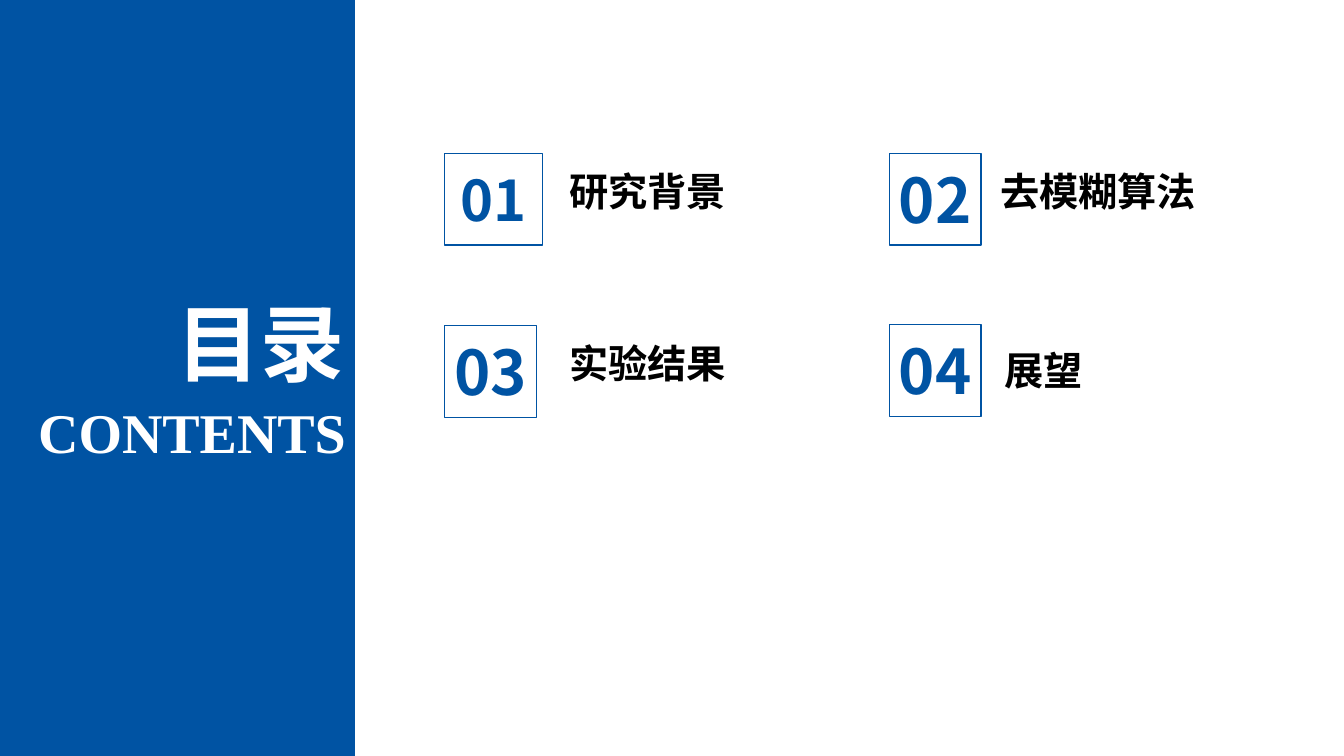
"""Build the contents slide with a blue side panel and four numbered topics."""
from lxml import etree
from pptx import Presentation
from pptx.dml.color import RGBColor
from pptx.enum.shapes import MSO_SHAPE as Shape
from pptx.enum.text import MSO_AUTO_SIZE as AutoSize, PP_ALIGN as Align
from pptx.oxml.ns import qn
from pptx.util import Inches, Pt

COLORS = {"blue": "0053A3", "white": "FFFFFF", "black": "000000"}
SANS, SERIF = "Noto Sans CJK SC", "Times New Roman"
PANEL = (0, 0, 3.52, 7.5)
HEADINGS = [
    ("目录", (0.98, 2.84, 2.54, 1.11), 60, SANS),
    ("CONTENTS", (0, 3.89, 3.53, 0.77), 40, SERIF),
]
TOPICS = [
    {"number": "01", "size": 40, "frame": (4.41, 1.52, 0.97, 0.91),
     "title": "研究背景", "title_box": (5.55, 1.61, 2.79, 0.57)},
    {"number": "03", "size": 44, "frame": (4.41, 3.23, 0.91, 0.91),
     "title": "实验结果", "title_box": (5.55, 3.32, 2.62, 0.57)},
    {"number": "04", "size": 44, "frame": (8.82, 3.22, 0.91, 0.91),
     "title": "展望", "title_box": (9.86, 3.39, 2.62, 0.57)},
    {"number": "02", "size": 44, "frame": (8.82, 1.52, 0.91, 0.91),
     "title": "去模糊算法", "title_box": (9.82, 1.61, 3.05, 0.57)},
]
NUMBER_BOXES = {40: (0.97, 0.77), 44: (0.98, 0.84)}


def color(name):
    return RGBColor.from_string(COLORS[name])


def add_text(slide, text, box, size, color_name, align=Align.LEFT, font_name=SANS):
    shape = slide.shapes.add_textbox(*map(Inches, box))
    frame = shape.text_frame
    frame.word_wrap = True
    frame.auto_size = AutoSize.SHAPE_TO_FIT_TEXT
    paragraph = frame.paragraphs[0]
    paragraph.alignment = align
    run = paragraph.add_run()
    run.text = text
    font = run.font
    font.size, font.bold, font.name = Pt(size), True, font_name
    font.color.rgb = color(color_name)
    east_asian = etree.SubElement(run._r.get_or_add_rPr(), qn("a:ea"))
    east_asian.set("typeface", font_name)


def add_rectangle(slide, box, fill=None, line=None):
    shape = slide.shapes.add_shape(Shape.RECTANGLE, *map(Inches, box))
    shape.shadow.inherit = False
    if fill:
        shape.fill.solid()
        shape.fill.fore_color.rgb = color(fill)
    else:
        shape.fill.background()
    if line:
        shape.line.color.rgb = color(line)
        shape.line.width = Pt(1)
    else:
        shape.line.fill.background()


def add_topic(slide, topic):
    left, top, width, height = topic["frame"]
    box_width, box_height = NUMBER_BOXES[topic["size"]]
    number_box = (left + (width - box_width) / 2, top + (height - box_height) / 2,
                  box_width, box_height)
    add_text(slide, topic["title"], topic["title_box"], 28, "black")
    add_text(slide, topic["number"], number_box, topic["size"], "blue", Align.CENTER)
    add_rectangle(slide, topic["frame"], line="blue")


def main():
    presentation = Presentation()
    presentation.slide_width, presentation.slide_height = Inches(13.33), Inches(7.5)
    slide = presentation.slides.add_slide(presentation.slide_layouts[6])
    add_rectangle(slide, PANEL, fill="blue")
    for text, box, size, font_name in HEADINGS:
        add_text(slide, text, box, size, "white", Align.RIGHT, font_name)
    for topic in TOPICS:
        add_topic(slide, topic)
    presentation.save("out.pptx")


if __name__ == "__main__":
    main()
